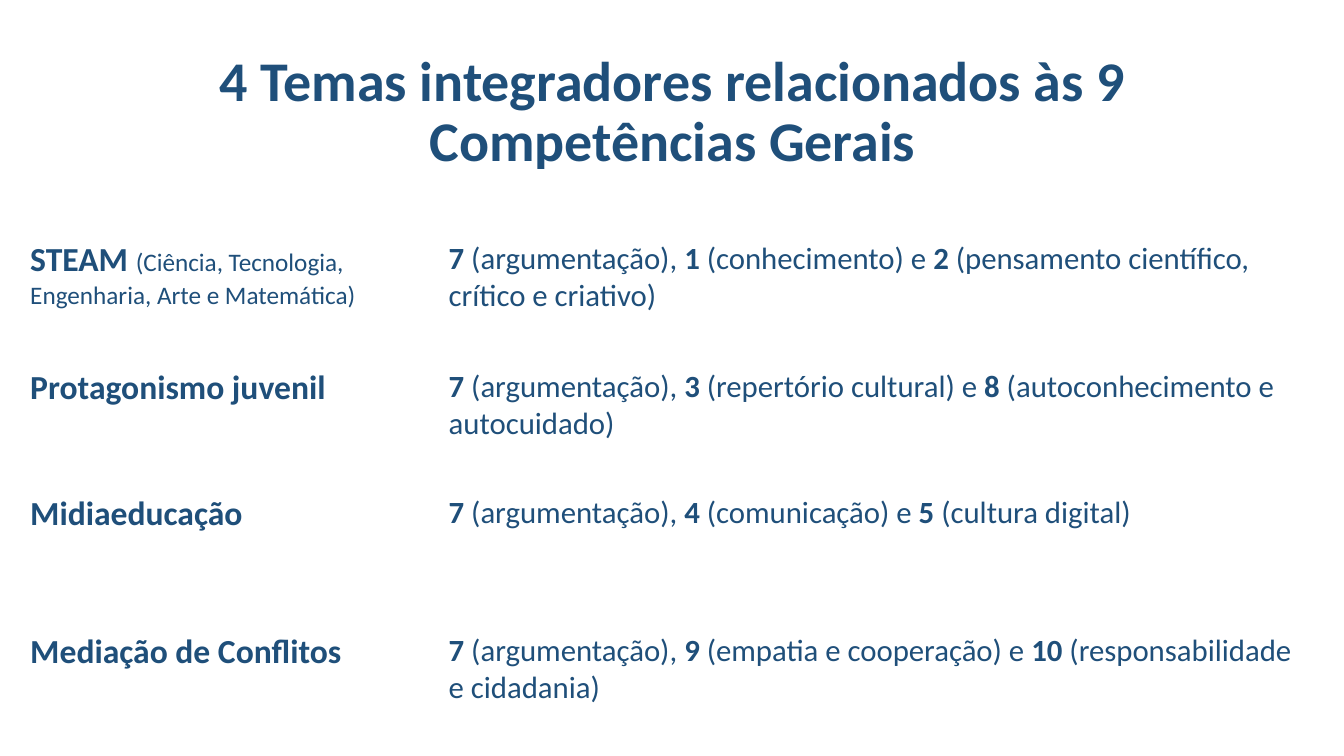
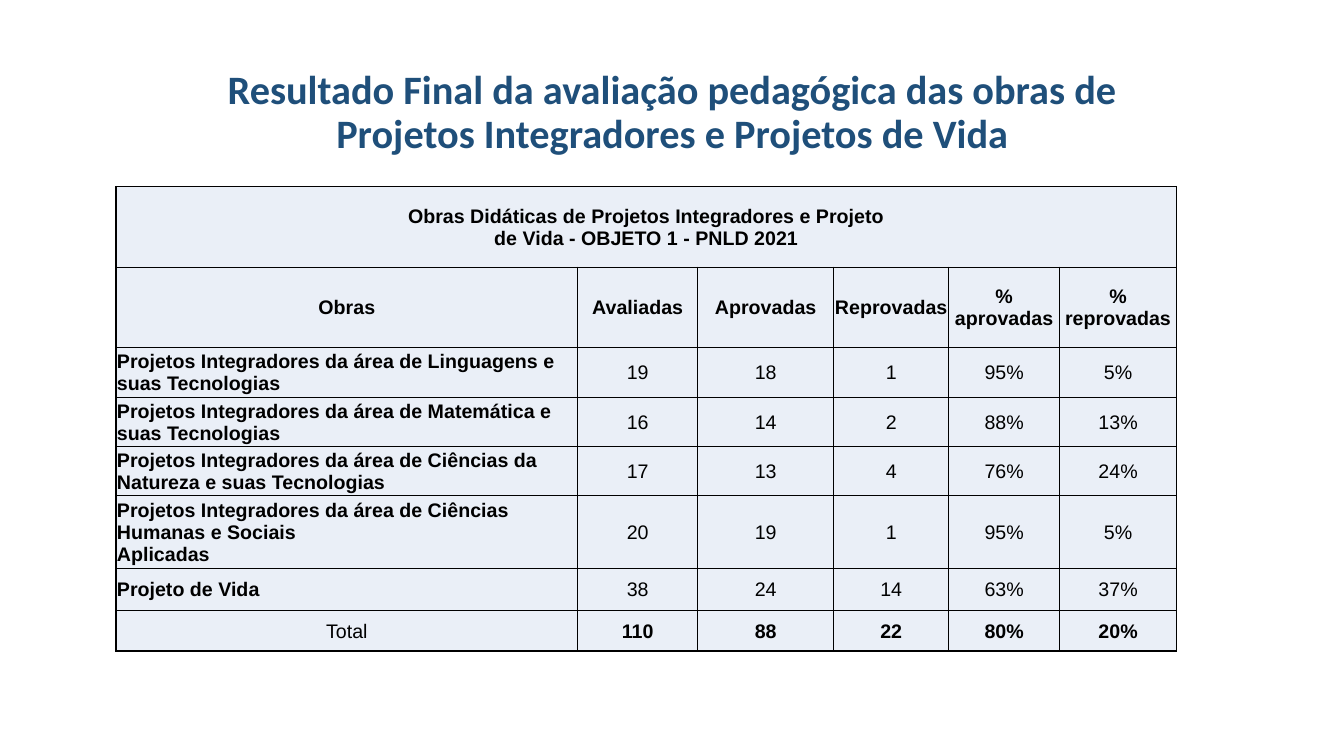
from dataclasses import dataclass

from lxml import etree
from pptx import Presentation
from pptx import util as u
from pptx.dml.color import RGBColor
from pptx.enum import text as t
from pptx.oxml import ns

# Shared scale, colours and fonts
PX = 9144  # EMU in one px, 100 px to the inch
NAVY = RGBColor(0x1F, 0x4F, 0x7A)
BLACK = RGBColor(0x00, 0x00, 0x00)
PALE_BLUE = RGBColor(0xEA, 0xEF, 0xF7)
HEADING_FONT = "Calibri"
DATA_FONT = "Arial"
BOLD_MARK = "**"
BREAK_MARK = "|"


@dataclass(frozen=True)
class Box:
    left: int
    top: int
    width: int
    height: int

    def emu(self) -> list[int]:
        return [n * PX for n in (self.left, self.top, self.width, self.height)]


@dataclass(frozen=True)
class Theme:
    name: str
    skills: str


@dataclass(frozen=True)
class Result:
    works: str
    reviewed: int
    approved: int
    rejected: int
    approved_share: str
    rejected_share: str

    def values(self) -> list[str]:
        return [str(self.reviewed), str(self.approved), str(self.rejected),
                self.approved_share, self.rejected_share]


TITLE_BOX = Box(92, 40, 1150, 145)

THEMES = [
    Theme("**STEAM **(Ciência, Tecnologia, Engenharia, Arte e Matemática)",
          "**7** (argumentação), **1** (conhecimento) e **2** (pensamento científico, crítico e criativo)"),
    Theme("**Protagonismo juvenil**",
          "**7 **(argumentação), **3** (repertório cultural) e **8** (autoconhecimento e\nautocuidado)"),
    Theme("**Midiaeducação**",
          "**7 **(argumentação), **4** (comunicação) e **5** (cultura digital)"),
    Theme("**Mediação de Conflitos**",
          "**7** (argumentação), **9** (empatia e cooperação) e **10** (responsabilidade\ne cidadania)"),
]

AREA = "Projetos Integradores da área de "
HEADERS = ["Obras", "Avaliadas", "Aprovadas", "Reprovadas", "% aprovadas", "% reprovadas"]
RESULTS = [
    Result(AREA + "Linguagens e suas Tecnologias", 19, 18, 1, "95%", "5%"),
    Result(AREA + "Matemática e suas Tecnologias", 16, 14, 2, "88%", "13%"),
    Result(AREA + "Ciências da Natureza e suas Tecnologias", 17, 13, 4, "76%", "24%"),
    Result(AREA + "Ciências Humanas e Sociais|Aplicadas", 20, 19, 1, "95%", "5%"),
    Result("Projeto de Vida", 38, 24, 14, "63%", "37%"),
]
TOTAL = Result("Total", 110, 88, 22, "80%", "20%")


def bold(words: str) -> str:
    return BOLD_MARK + words + BOLD_MARK


def write(frame, words: str, *, size: float, plain_size: float | None = None,
          font: str = HEADING_FONT, color: RGBColor = NAVY,
          align=t.PP_ALIGN.LEFT, spacing: float = 1.0) -> None:
    """Fill a text frame; newlines split paragraphs and marks give bold and breaks."""
    for index, line in enumerate(words.split("\n")):
        para = frame.paragraphs[0] if index == 0 else frame.add_paragraph()
        para.alignment = align
        para.line_spacing = spacing
        for part_index, part in enumerate(line.split(BOLD_MARK)):
            is_bold = part_index % 2 == 1
            for piece_index, piece in enumerate(part.split(BREAK_MARK)):
                if piece_index:
                    para.add_line_break()
                if not piece:
                    continue
                span = para.add_run()
                span.text = piece
                span.font.name = font
                span.font.size = u.Pt(size if is_bold else plain_size or size)
                span.font.bold = is_bold
                span.font.color.rgb = color


def add_page(deck, title: str, size: float):
    page = deck.slides.add_slide(deck.slide_layouts[5])
    box = page.shapes.title
    box.left, box.top, box.width, box.height = TITLE_BOX.emu()
    frame = box.text_frame
    frame.word_wrap = True
    frame.auto_size = t.MSO_AUTO_SIZE.NONE
    frame.vertical_anchor = t.MSO_ANCHOR.MIDDLE
    write(frame, bold(title), size=size, align=t.PP_ALIGN.CENTER, spacing=0.9)
    return page


def add_grid(page, left: int, top: int, columns: list[int], rows: list[int]):
    box = Box(left, top, sum(columns), sum(rows))
    table = page.shapes.add_table(len(rows), len(columns), *box.emu()).table
    table.first_row = table.horz_banding = False
    for column, width in zip(table.columns, columns):
        column.width = width * PX
    for row, height in zip(table.rows, rows):
        row.height = height * PX
    table.cell(0, 0).merge(table.cell(0, len(columns) - 1))
    return table


def set_margins(cell, left: int, top: int, right: int, bottom: int) -> None:
    cell.margin_left, cell.margin_top = left * PX, top * PX
    cell.margin_right, cell.margin_bottom = right * PX, bottom * PX


def outline(cell, color: RGBColor, points: float) -> None:
    properties = cell._tc.get_or_add_tcPr()
    for side in ("a:lnL", "a:lnR", "a:lnT", "a:lnB"):
        line = etree.SubElement(properties, ns.qn(side), w=str(u.Pt(points)))
        fill = etree.SubElement(line, ns.qn("a:solidFill"))
        etree.SubElement(fill, ns.qn("a:srgbClr"), val=str(color))


def add_themes_page(deck) -> None:
    page = add_page(deck, "4 Temas integradores relacionados às 9 Competências Gerais", 40)
    table = add_grid(page, 20, 168, [415, 875], [60, 127, 125, 137, 123])
    for cell in table.iter_cells():
        cell.fill.background()
        set_margins(cell, 10, 10, 5, 5)
    for row, theme in enumerate(THEMES, start=1):
        write(table.cell(row, 0).text_frame, theme.name, size=24, plain_size=18)
        write(table.cell(row, 1).text_frame, theme.skills, size=22)


def add_results_page(deck) -> None:
    page = add_page(deck, "Resultado Final da avaliação pedagógica das obras de|"
                          "Projetos Integradores e Projetos de Vida", 28.8)
    table = add_grid(page, 115, 185, [458, 119, 135, 114, 110, 116],
                     [80, 80, 49, 49, 49, 72, 42, 40])
    for cell in table.iter_cells():
        outline(cell, BLACK, 1)
        cell.fill.solid()
        cell.fill.fore_color.rgb = PALE_BLUE
        cell.vertical_anchor = t.MSO_ANCHOR.MIDDLE
        set_margins(cell, 1, 1, 1, 0)

    # Heading rows, one row for each area, then the totals
    lines = [[bold("Obras Didáticas de Projetos Integradores e Projeto|de Vida - OBJETO 1 - PNLD 2021")],
             [bold(header) for header in HEADERS]]
    lines += [[bold(result.works), *result.values()] for result in RESULTS]
    lines.append([TOTAL.works, *map(bold, TOTAL.values())])
    area_rows = range(2, 2 + len(RESULTS))
    for row, line in enumerate(lines):
        for column, words in enumerate(line):
            is_area = column == 0 and row in area_rows
            write(table.cell(row, column).text_frame, words, size=14, font=DATA_FONT, color=BLACK,
                  align=t.PP_ALIGN.LEFT if is_area else t.PP_ALIGN.CENTER)


def main() -> None:
    deck = Presentation()
    deck.slide_width, deck.slide_height = 1333 * PX, 750 * PX
    add_themes_page(deck)
    add_results_page(deck)
    deck.save("out.pptx")


if __name__ == "__main__":
    main()
